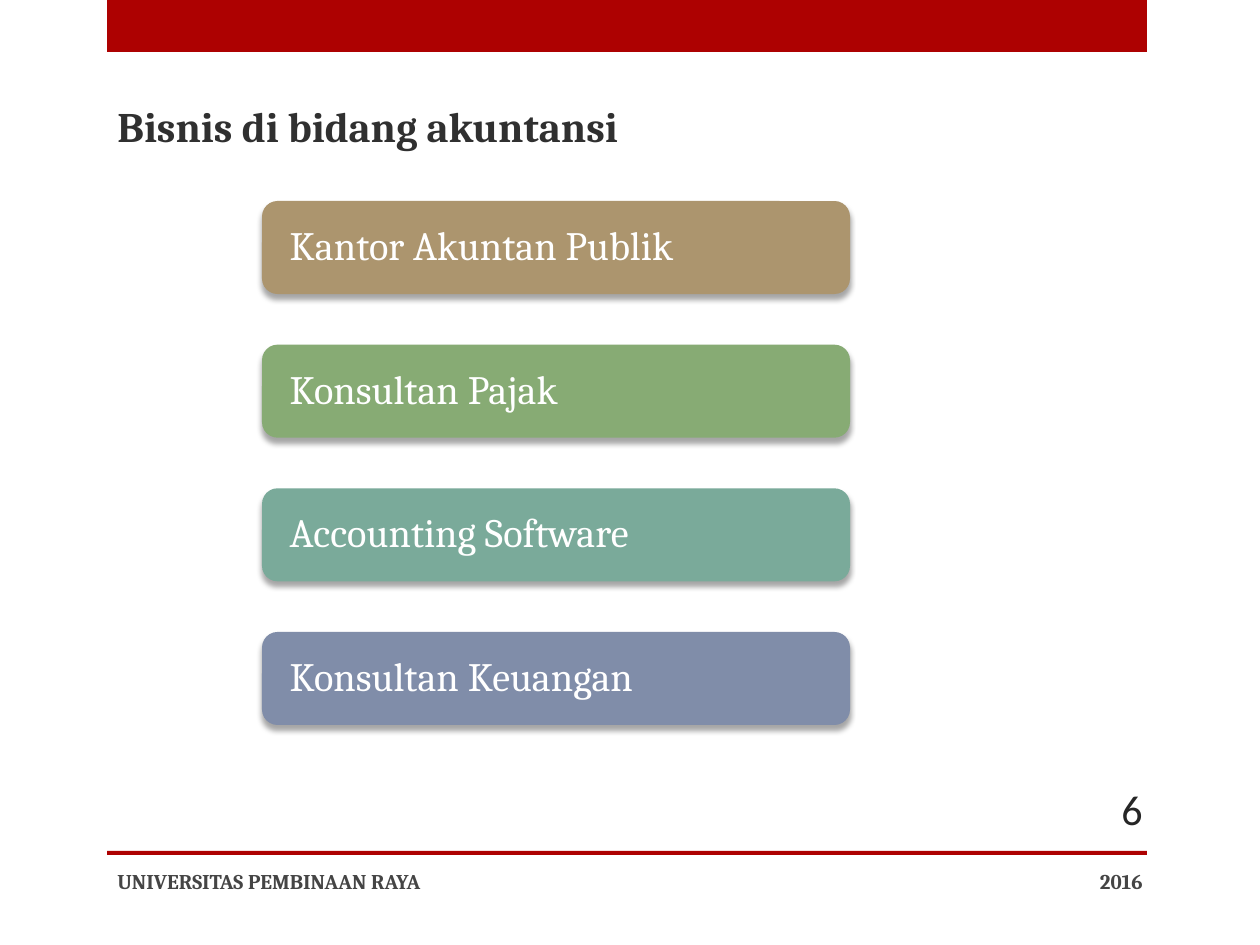
from lxml import etree
from pptx import Presentation
from pptx.dml.color import RGBColor
from pptx.enum.shapes import MSO_SHAPE
from pptx.enum.text import MSO_ANCHOR, PP_ALIGN
from pptx.oxml import parse_xml
from pptx.oxml.ns import nsdecls, qn
from pptx.util import Emu, Pt

RECT, ROUND = MSO_SHAPE.RECTANGLE, MSO_SHAPE.ROUNDED_RECTANGLE
TOP, MIDDLE = MSO_ANCHOR.TOP, MSO_ANCHOR.MIDDLE
LEFT, RIGHT = PP_ALIGN.LEFT, PP_ALIGN.RIGHT

RED = RGBColor(0xAD, 0x01, 0x01)
WHITE = RGBColor(0xFF, 0xFF, 0xFF)
DARK = RGBColor(0x30, 0x30, 0x30)
GREY = RGBColor(0x45, 0x45, 0x45)
INK = RGBColor(0x26, 0x26, 0x26)
SAND = RGBColor(0xAC, 0x95, 0x6E)
GREEN = RGBColor(0x87, 0xAB, 0x74)
TEAL = RGBColor(0x7A, 0xAA, 0x9A)
BLUE = RGBColor(0x80, 0x8D, 0xA9)

SERIF, SANS = "Cambria", "Calibri"
FIELDS = [
    ("Kantor Akuntan Publik", SAND),
    ("Konsultan Pajak", GREEN),
    ("Accounting Software", TEAL),
    ("Konsultan Keuangan", BLUE),
]


def px(n):
    return Emu(round(n * 914400 / 126))


def block(slide, kind, box, fill):
    shape = slide.shapes.add_shape(kind, *map(px, box))
    shape.shadow.inherit = False
    shape.fill.solid()
    shape.fill.fore_color.rgb = fill
    shape.line.fill.background()
    return shape


def write(shape, text, size, color, font=SERIF, bold=False,
          align=LEFT, anchor=MIDDLE):
    frame = shape.text_frame
    frame.word_wrap = True
    frame.vertical_anchor = anchor
    frame.text = text
    para = frame.paragraphs[0]
    para.alignment = align
    face = para.runs[0].font
    face.name, face.size, face.bold = font, Pt(size), bold
    face.color.rgb = color
    return para


def label(slide, box, text, size, color, **style):
    return write(slide.shapes.add_textbox(*map(px, box)),
                 text, size, color, **style)


def shade(shape):
    """Soft shadow straight below the shape."""
    effects = shape._element.spPr.find(qn("a:effectLst"))
    effects.append(parse_xml(
        f'<a:outerShdw {nsdecls("a")} blurRad="38100" dist="38100" '
        'dir="5400000" rotWithShape="0"/>'))
    color = etree.SubElement(effects[0], qn("a:srgbClr"), val="000000")
    etree.SubElement(color, qn("a:alpha"), val="35000")


def header(slide, box):
    x, y, w, h = box
    block(slide, RECT, (x, y, w, 52), RED)
    para = label(slide, (x - 2, y + 94, w, h - 94), "Bisnis di bidang akuntansi",
                 24, DARK, bold=True, anchor=TOP)
    para.space_before = Pt(5)


def bars(slide, box):
    x, y, w, h = box
    tall = 93
    step = (h - tall) / (len(FIELDS) - 1)
    for i, (text, fill) in enumerate(FIELDS):
        bar = block(slide, ROUND, (x, y + i * step, w, tall), fill)
        shade(bar)
        para = write(bar, text, 23, WHITE)
        para.line_spacing = 0.9
        frame = bar.text_frame
        frame.margin_left = frame.margin_right = px(23)
        frame.margin_top = frame.margin_bottom = 0


def footer(slide, box):
    x, y, w, h = box
    end = x + w + 8
    # Page number above the rule
    label(slide, (end - 105, y, 105, 50), "6", 24, INK, font=SANS, align=RIGHT)
    block(slide, RECT, (x, y + 67, w, 4), RED)
    # School and year below it
    row = y + h - 50
    label(slide, (x - 2, row, 672, 50), "UNIVERSITAS PEMBINAAN RAYA", 12, GREY,
          bold=True)
    label(slide, (end - 294, row, 294, 50), "2016", 12, GREY, bold=True,
          align=RIGHT)


def main():
    deck = Presentation()
    deck.slide_width, deck.slide_height = px(1260), px(945)
    slide = deck.slides.add_slide(deck.slide_layouts[6])
    header(slide, (107, 0, 1040, 160))
    bars(slide, (262, 201, 588, 524))
    footer(slide, (107, 784, 1040, 122))
    deck.save("out.pptx")


if __name__ == "__main__":
    main()
